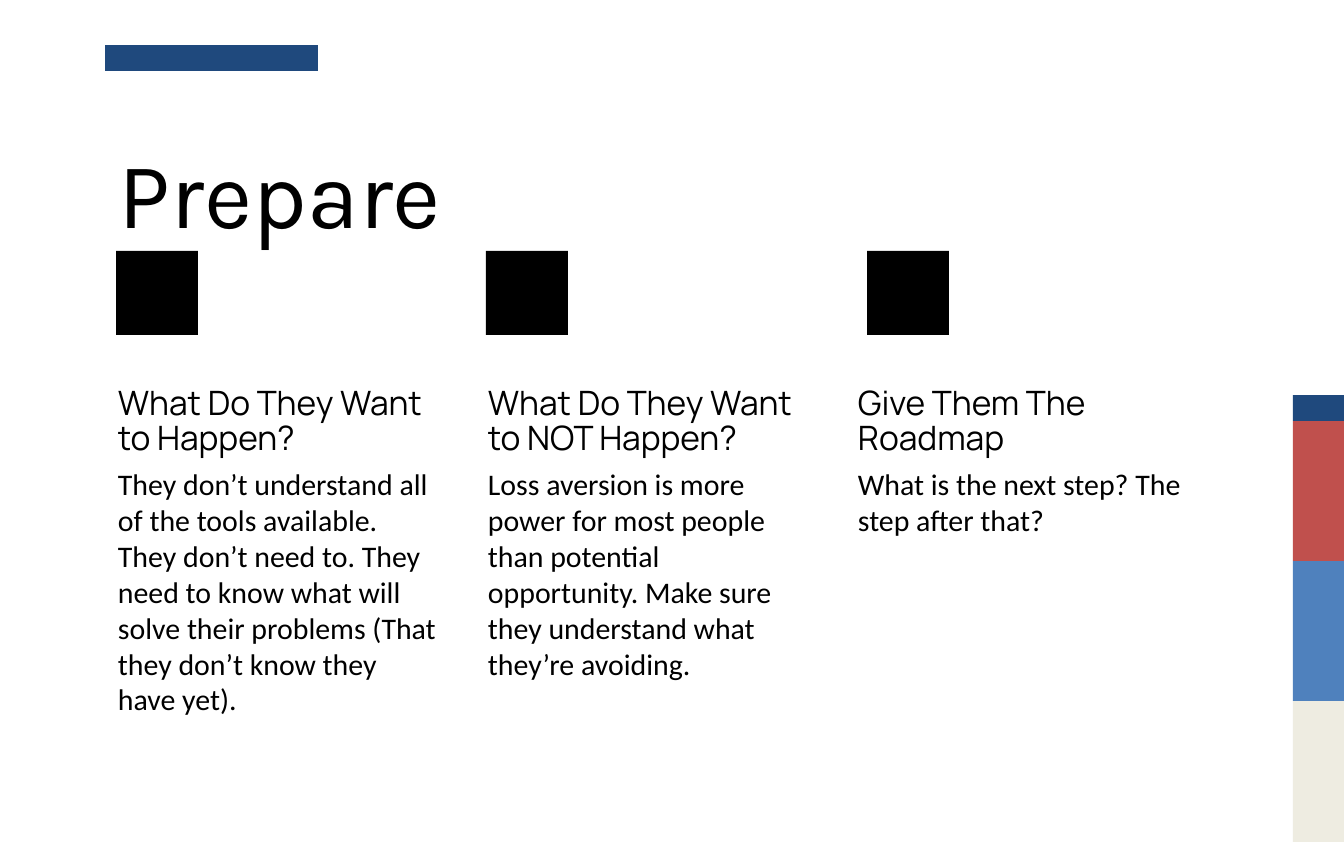
from pptx import Presentation
from pptx.dml.color import RGBColor as RGB
from pptx.enum.shapes import MSO_SHAPE as SHAPE
from pptx.enum.text import MSO_ANCHOR as ANCHOR
from pptx.util import Emu, Pt

THEME = {
    "navy": "1F497D", "red": "C0504D", "blue": "4F81BD", "cream": "EEECE1",
    "black": "000000",
    "title": ("Karla", 56.5), "heading": ("Manrope", 20.2), "body": ("Calibri", 18),
}
EMU_PER_PX = 7652
INSET = 13


def px(*lengths):
    return [Emu(n * EMU_PER_PX) for n in lengths]


def add_text(box, text, style, anchor=ANCHOR.TOP, spacing=1.0):
    s = slide.shapes.add_textbox(*px(*box))
    tf = s.text_frame
    tf.word_wrap = True
    tf.vertical_anchor = anchor
    tf.margin_left, tf.margin_top, tf.margin_right, tf.margin_bottom = px(*[INSET] * 4)
    p = tf.paragraphs[0]
    p.line_spacing = spacing
    r = p.add_run()
    r.text = text
    r.font.name, size = THEME[style]
    r.font.size = Pt(size)
    r.font.color.rgb = RGB.from_string(THEME["black"])


prs = Presentation()
prs.slide_width, prs.slide_height = px(1344, 842)
slide = prs.slides.add_slide(prs.slide_layouts[6])

# Side strip, top accent bar and the square above each column
bars = [
    ((1293, 701, 51, 141), "cream"),
    ((1293, 561, 51, 140), "blue"),
    ((1293, 421, 51, 140), "red"),
    ((1293, 395, 51, 26), "navy"),
    ((105, 45, 213, 26), "navy"),
]
squares = [((x, 251, 82, 84), "black") for x in (116, 486, 867)]
for box, color in bars + squares:
    s = slide.shapes.add_shape(SHAPE.RECTANGLE, *px(*box))
    s.shadow.inherit = False
    s.fill.solid()
    s.fill.fore_color.rgb = RGB.from_string(THEME[color])
    s.line.fill.background()

# Title
add_text((106, 122, 1133, 84), "Prepare", "title")

# Three columns of heading and body
columns = [
    ("What Do They Want to Happen?",
     "They don’t understand all of the tools available. They don’t need to. "
     "They need to know what will solve their problems (That they don’t know they have yet)."),
    ("What Do They Want to NOT Happen?",
     "Loss aversion is more power for most people than potential opportunity. "
     "Make sure they understand what they’re avoiding."),
    ("Give Them The Roadmap",
     "What is the next step? The step after that?"),
]
for i, (heading, body) in enumerate(columns):
    left = 105 + 370 * i
    add_text((left, 367, 349, 104), heading, "heading", ANCHOR.BOTTOM, 0.88)
    add_text((left, 453, 349, 268), body, "body")

prs.save("out.pptx")
